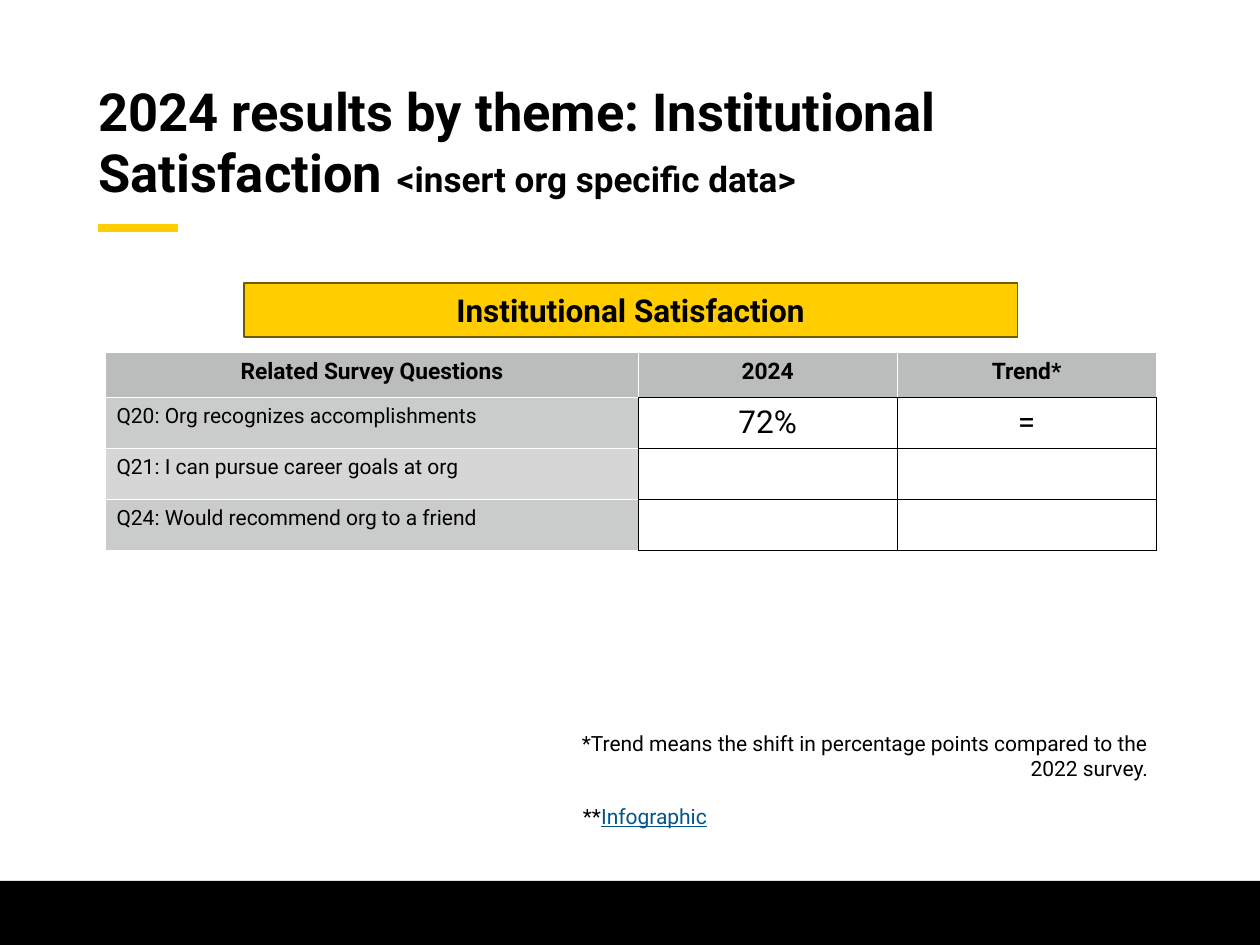
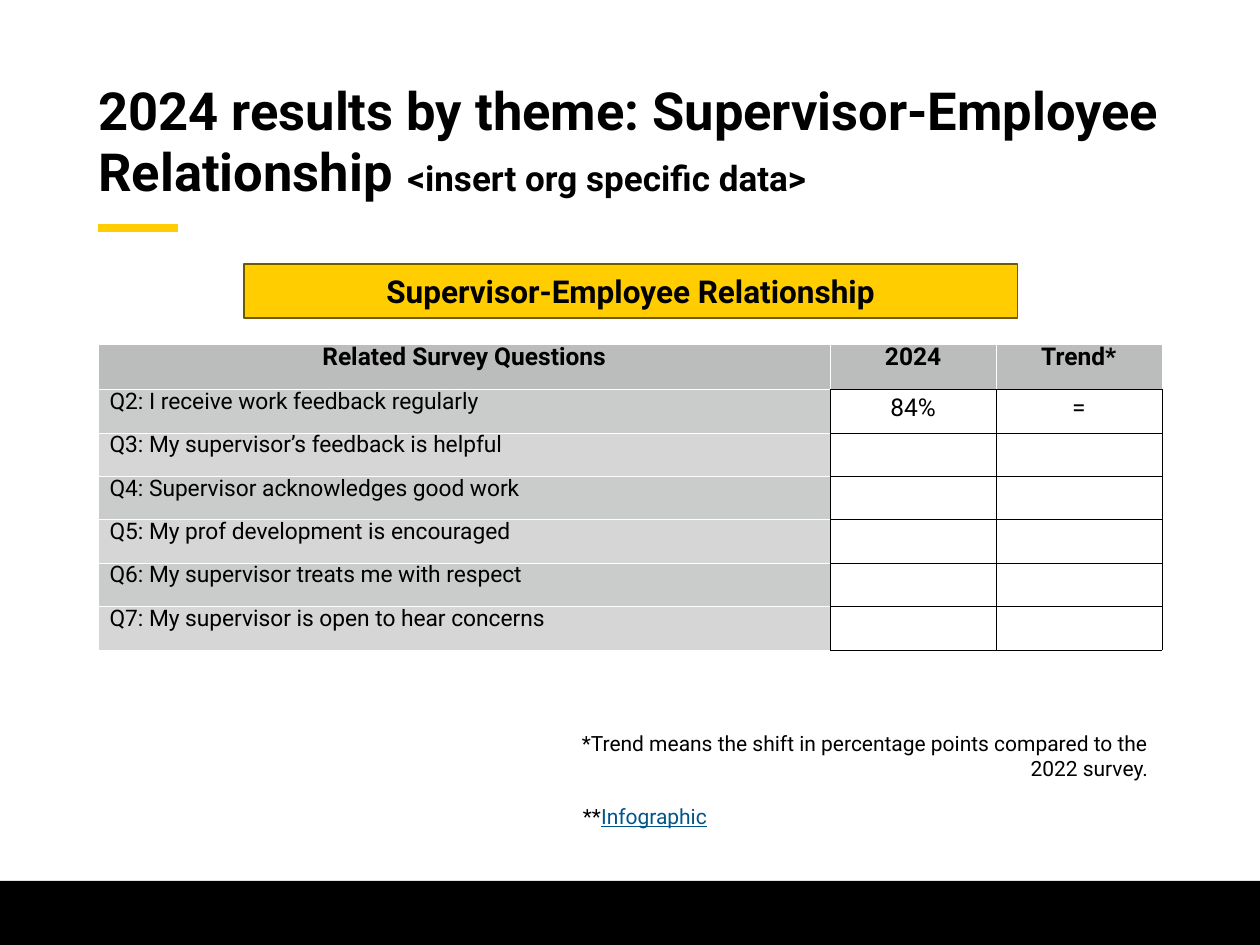
from lxml import etree
from pptx import Presentation
from pptx.dml.color import RGBColor
from pptx.enum.shapes import MSO_CONNECTOR, MSO_SHAPE
from pptx.enum.text import MSO_ANCHOR, MSO_AUTO_SIZE, PP_ALIGN
from pptx.oxml.ns import qn
from pptx.util import Inches, Pt

LEFT, CENTER, RIGHT = PP_ALIGN.LEFT, PP_ALIGN.CENTER, PP_ALIGN.RIGHT
TOP, MIDDLE = MSO_ANCHOR.TOP, MSO_ANCHOR.MIDDLE
NO_AUTOSIZE = MSO_AUTO_SIZE.NONE
RECT, STRAIGHT = MSO_SHAPE.RECTANGLE, MSO_CONNECTOR.STRAIGHT

FONT = "Roboto"
COLORS = {
    "black": "000000", "white": "FFFFFF", "gold": "FFCD00", "bronze": "705A00",
    "header": "BBBCBC", "odd": "CACBCB", "even": "D6D6D6", "link": "00558C",
}

# Grid of 100 columns by 75 rows; boxes are left, top, width, height
COLS, ROWS = 100, 75
SLIDE_W, SLIDE_H = Inches(10), Inches(7.5)
MARGIN = 7.8
ACCENT = (MARGIN, 18.1, 6.3, 0)
FOOTER = (0, 69.9, COLS, 5.1)
TREND_NOTE = (41.4, 57.5, 50.7, 7.1)
LINK_NOTE = (44.5, 63.3, 12.6, 5)

HEADINGS = ["Related Survey Questions", "2024", "Trend*"]
THEMES = [
    {
        "theme": "Institutional Satisfaction",
        "title_box": (MARGIN, 4.3, 84.4, 14.5),
        "banner_box": (19.35, 22.45, 61.4, 4.3),
        "table_box": (8.35, 27.95, 83.4, 15.7),
        "answer_w": 20.55, "header_h": 3.6,
        "sizes": {"header": 13, "question": 12, "answer": 18},
        "spacing": {}, "pad": 0.5,
        "rows": [
            ("Q20: Org recognizes accomplishments", "72%", "="),
            ("Q21: I can pursue career goals at org", "", ""),
            ("Q24: Would recommend org to a friend", "", ""),
        ],
    },
    {
        "theme": "Supervisor-Employee Relationship",
        "title_box": (MARGIN, 4.25, 86.7, 14.5),
        "banner_box": (19.35, 20.95, 61.4, 4.3),
        "table_box": (MARGIN, 27.3, 84.4, 24.3),
        "answer_w": 13.15, "header_h": 3.6,
        "sizes": {"header": 14, "question": 13, "answer": 14},
        "spacing": {"header": Pt(12.9), "question": Pt(11.6), "answer": Pt(13.6)},
        "pad": 0.4,
        "rows": [
            ("Q2: I receive work feedback regularly", "84%", "="),
            ("Q3: My supervisor’s feedback is helpful", "", ""),
            ("Q4: Supervisor acknowledges good work", "", ""),
            ("Q5: My prof development is encouraged", "", ""),
            ("Q6: My supervisor treats me with respect", "", ""),
            ("Q7: My supervisor is open to hear concerns", "", ""),
        ],
    },
]


def rgb(name):
    return RGBColor.from_string(COLORS[name])


def gx(cols):
    return round(SLIDE_W * cols / COLS)


def gy(rows):
    return round(SLIDE_H * rows / ROWS)


def place(box):
    x, y, w, h = box
    return gx(x), gy(y), gx(w), gy(h)


def set_all(target, values):
    for name, value in values.items():
        setattr(target, name, value)


def add_run(p, text, size, color="black", **font):
    r = p.add_run()
    r.text = text
    set_all(r.font, {"name": FONT, "size": Pt(size), "bold": False, **font})
    r.font.color.rgb = rgb(color)


def add_rect(s, box, fill, line=None):
    sp = s.shapes.add_shape(RECT, *place(box))
    sp.shadow.inherit = False
    sp.fill.solid()
    sp.fill.fore_color.rgb = rgb(fill)
    if line:
        sp.line.color.rgb = rgb(line)
        sp.line.width = Pt(1)
    else:
        sp.line.fill.background()
    return sp


# Gold accent under the title and black footer band
def add_frame(s):
    x, y, w, h = place(ACCENT)
    accent = s.shapes.add_connector(STRAIGHT, x, y, x + w, y + h)
    accent.line.color.rgb = rgb("gold")
    accent.line.width = Pt(5)
    etree.SubElement(accent._element.spPr, qn("a:effectLst"))
    add_rect(s, FOOTER, "black")


def add_title(s, box, theme):
    title = s.shapes.title
    set_all(title, dict(zip(("left", "top", "width", "height"), place(box))))
    tf = title.text_frame
    set_all(tf, {"margin_left": 0, "margin_top": 0, "margin_right": 0, "margin_bottom": 0,
                 "vertical_anchor": MIDDLE, "word_wrap": True, "auto_size": NO_AUTOSIZE})
    p = tf.paragraphs[0]
    set_all(p, {"alignment": LEFT, "line_spacing": 0.9})
    add_run(p, f"2024 results by theme: {theme}", 30, bold=True)
    add_run(p, " ", 33, bold=True)
    add_run(p, "<insert org specific data>", 20, bold=True)


def add_banner(s, box, theme):
    tf = add_rect(s, box, "gold", "bronze").text_frame
    tf.vertical_anchor = MIDDLE
    p = tf.paragraphs[0]
    p.alignment = CENTER
    add_run(p, theme, 18, bold=True)


def set_borders(cell, colors):
    tcPr = cell._tc.get_or_add_tcPr()
    for i, (side, color) in enumerate(zip("LRTB", colors)):
        ln = etree.Element(qn(f"a:ln{side}"), w=str(Pt(0.25)))
        fill = etree.SubElement(ln, qn("a:solidFill"))
        etree.SubElement(fill, qn("a:srgbClr"), val=COLORS[color])
        tcPr.insert(i, ln)


# Role, fill and borders (left, right, top, bottom) follow from the cell's place
def cell_style(row, col):
    if row == 0:
        below = "black" if col else "white"
        return "header", "header", ("white", "white", "white", below)
    if col == 0:
        return "question", "odd" if row % 2 else "even", ("white", "black", "white", "white")
    return "answer", "white", ("black",) * 4


def add_results(s, t):
    box = t["table_box"]
    lines = [HEADINGS, *t["rows"]]
    table = s.shapes.add_table(len(lines), len(HEADINGS), *place(box)).table
    answer_w = t["answer_w"]
    for column, width in zip(table.columns, (box[2] - 2 * answer_w, answer_w, answer_w)):
        column.width = gx(width)
    row_h = (box[3] - t["header_h"]) / len(t["rows"])
    for i, line in enumerate(lines):
        table.rows[i].height = gy(row_h if i else t["header_h"])
        for j, text in enumerate(line):
            role, fill, borders = cell_style(i, j)
            cell = table.cell(i, j)
            set_all(cell, {"margin_left": gx(0.9), "margin_right": gx(0.9),
                           "margin_top": gy(t["pad"]), "margin_bottom": gy(t["pad"]),
                           "vertical_anchor": MIDDLE if role == "answer" else TOP})
            cell.fill.solid()
            cell.fill.fore_color.rgb = rgb(fill)
            set_borders(cell, borders)
            p = cell.text_frame.paragraphs[0]
            set_all(p, {"alignment": LEFT if role == "question" else CENTER,
                        "line_spacing": t["spacing"].get(role)})
            size = t["sizes"][role]
            if text:
                add_run(p, text, size, bold=role == "header")
            else:
                etree.SubElement(p._p, qn("a:endParaRPr"), sz=str(size * 100))


def add_note(s, box):
    tf = s.shapes.add_textbox(*place(box)).text_frame
    tf.word_wrap = True
    p = tf.paragraphs[0]
    p.alignment = RIGHT
    return p


def add_notes(s):
    trend = add_note(s, TREND_NOTE)
    add_run(trend, "*Trend means the shift in percentage points compared to the 2022 survey.", 12)
    link = add_note(s, LINK_NOTE)
    add_run(link, "**", 12)
    add_run(link, "Infographic", 12, "link", underline=True)


def add_theme_slide(prs, t):
    s = prs.slides.add_slide(prs.slide_layouts[5])
    add_frame(s)
    add_title(s, t["title_box"], t["theme"])
    add_results(s, t)
    add_banner(s, t["banner_box"], t["theme"])
    add_notes(s)


def main():
    prs = Presentation()
    prs.slide_width, prs.slide_height = SLIDE_W, SLIDE_H
    for t in THEMES:
        add_theme_slide(prs, t)
    prs.save("out.pptx")


if __name__ == "__main__":
    main()
